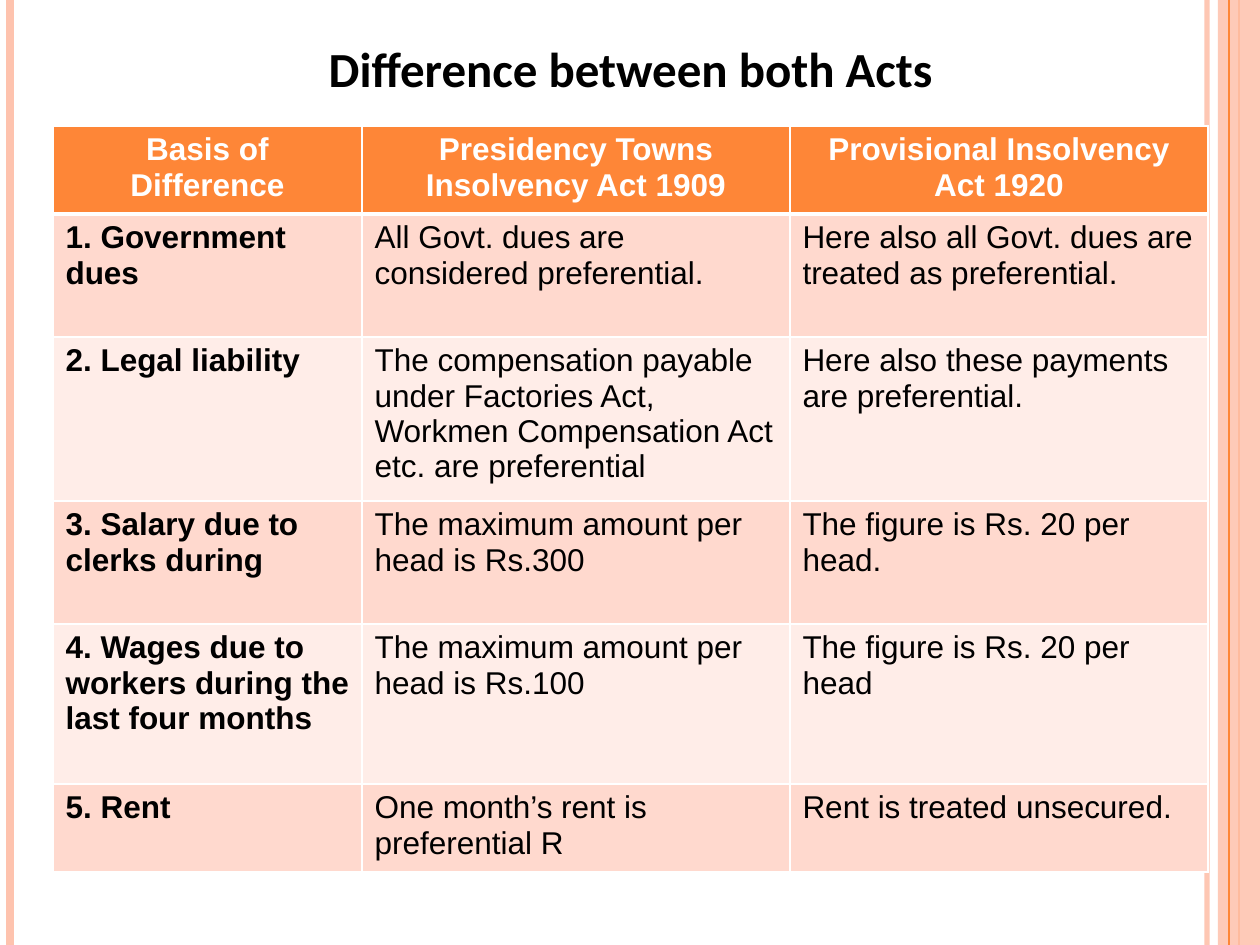
from lxml.etree import SubElement
from pptx import Presentation
from pptx.dml.color import RGBColor
from pptx.enum.shapes import MSO_CONNECTOR, MSO_SHAPE
from pptx.enum.text import MSO_ANCHOR, PP_ALIGN
from pptx.oxml.ns import qn
from pptx.util import Emu, Pt

TITLE = "Difference between both Acts"
ROWS = [
    ("Basis of Difference", "Presidency Towns Insolvency Act 1909",
     "Provisional Insolvency Act 1920"),
    ("1. Government dues", "All Govt. dues are considered preferential.",
     "Here also all Govt. dues are treated as preferential."),
    ("2. Legal liability",
     "The compensation payable under Factories Act, Workmen Compensation Act "
     "etc. are preferential",
     "Here also these payments are preferential."),
    ("3. Salary due to clerks during", "The maximum amount per head is Rs.300",
     "The figure is Rs. 20 per head."),
    ("4. Wages due to workers during the last four months",
     "The maximum amount per head is Rs.100", "The figure is Rs. 20 per head"),
    ("5. Rent", "One month’s rent is preferential R", "Rent is treated unsecured."),
]
COLUMN_WIDTHS = [309, 428, 418]
ROW_HEIGHTS = [88, 123, 164, 123, 160, 88]
TABLE_LEFT, TABLE_TOP = 53, 126
WIDTH, HEIGHT = 1260, 945

ORANGE, PEACH, WHITE, BLACK = "FE8637", "FEC3AE", "FFFFFF", "000000"
BANDS = ["FFEDE8", "FFD9CE"]
# Vertical rules: x, colour, points, opacity in percent
RULES_BELOW = [(1207, PEACH, 3, 93), (10, PEACH, 4.5, 100), (1239, ORANGE, 1.5, 100)]
RULES_ABOVE = [(1229, ORANGE, 0.75, 100)]
BAND_LEFT, BAND_OPACITY = 1218, 87


def px(length):
    return Emu(length * 914400 // 126)


def color(value):
    return RGBColor.from_string(value)


def set_opacity(element, percent):
    if percent < 100:
        tint = next(element.iter(qn("a:srgbClr")))
        SubElement(tint, qn("a:alpha"), val=str(percent * 1000))


def add_rule(page, x, line_color, points, opacity):
    rule = page.shapes.add_connector(MSO_CONNECTOR.STRAIGHT, px(x), 0, px(x), px(HEIGHT))
    rule.line.color.rgb = color(line_color)
    rule.line.width = Pt(points)
    properties = rule._element.spPr
    set_opacity(properties, opacity)
    SubElement(properties, qn("a:effectLst"))


def add_text(frame, text, size, font, text_color, bold, align):
    para = frame.paragraphs[0]
    para.alignment = align
    span = para.add_run()
    span.text = text
    span.font.size = Pt(size)
    span.font.name = font
    span.font.bold = bold
    span.font.color.rgb = color(text_color)


def add_border(cell, side, points):
    border = SubElement(cell._tc.get_or_add_tcPr(), qn(f"a:ln{side}"), w=str(Pt(points)))
    fill = SubElement(border, qn("a:solidFill"))
    SubElement(fill, qn("a:srgbClr"), val=WHITE)


def fill_cell(cell, text, row, column):
    header = row == 0
    for side in "LRTB":
        under_header = (row, side) in [(0, "B"), (1, "T")]
        add_border(cell, side, 3 if under_header else 1)
    cell.fill.solid()
    cell.fill.fore_color.rgb = color(ORANGE if header else BANDS[row % 2])
    add_text(cell.text_frame, text, 18, "Arial", WHITE if header else BLACK,
             header or column == 0, PP_ALIGN.CENTER if header else PP_ALIGN.LEFT)


def main():
    deck = Presentation()
    deck.slide_width, deck.slide_height = px(WIDTH), px(HEIGHT)
    page = deck.slides.add_slide(deck.slide_layouts[5])

    # Side decoration
    for rule in RULES_BELOW:
        add_rule(page, *rule)
    band = page.shapes.add_shape(MSO_SHAPE.RECTANGLE, px(BAND_LEFT), 0,
                                 px(WIDTH - BAND_LEFT), px(HEIGHT))
    band.shadow.inherit = False
    band.fill.solid()
    band.fill.fore_color.rgb = color(PEACH)
    set_opacity(band._element.spPr, BAND_OPACITY)
    band.line.fill.background()
    for rule in RULES_ABOVE:
        add_rule(page, *rule)

    # Title
    title = page.shapes.title
    title.left, title.top, title.width, title.height = px(53), px(32), px(1155), px(131)
    title.text_frame.vertical_anchor = MSO_ANCHOR.TOP
    add_text(title.text_frame, TITLE, 28, "Calibri", BLACK, True, PP_ALIGN.CENTER)

    # Comparison table
    table = page.shapes.add_table(len(ROWS), len(COLUMN_WIDTHS), px(TABLE_LEFT), px(TABLE_TOP),
                                  px(sum(COLUMN_WIDTHS)), px(sum(ROW_HEIGHTS))).table
    for column, width in zip(table.columns, COLUMN_WIDTHS):
        column.width = px(width)
    for row, height in zip(table.rows, ROW_HEIGHTS):
        row.height = px(height)
    for row, texts in enumerate(ROWS):
        for column, text in enumerate(texts):
            fill_cell(table.cell(row, column), text, row, column)

    deck.save("out.pptx")


if __name__ == "__main__":
    main()
